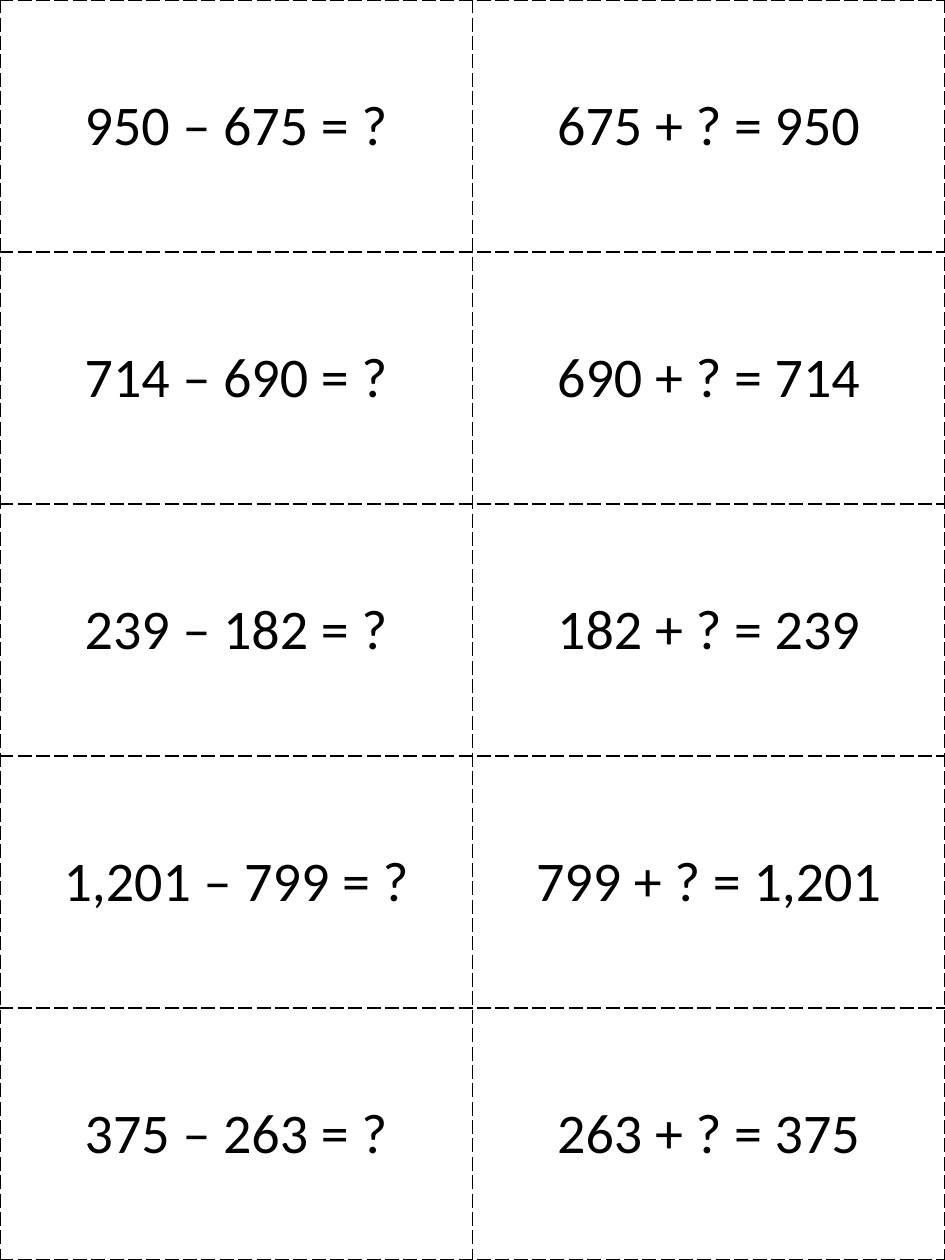
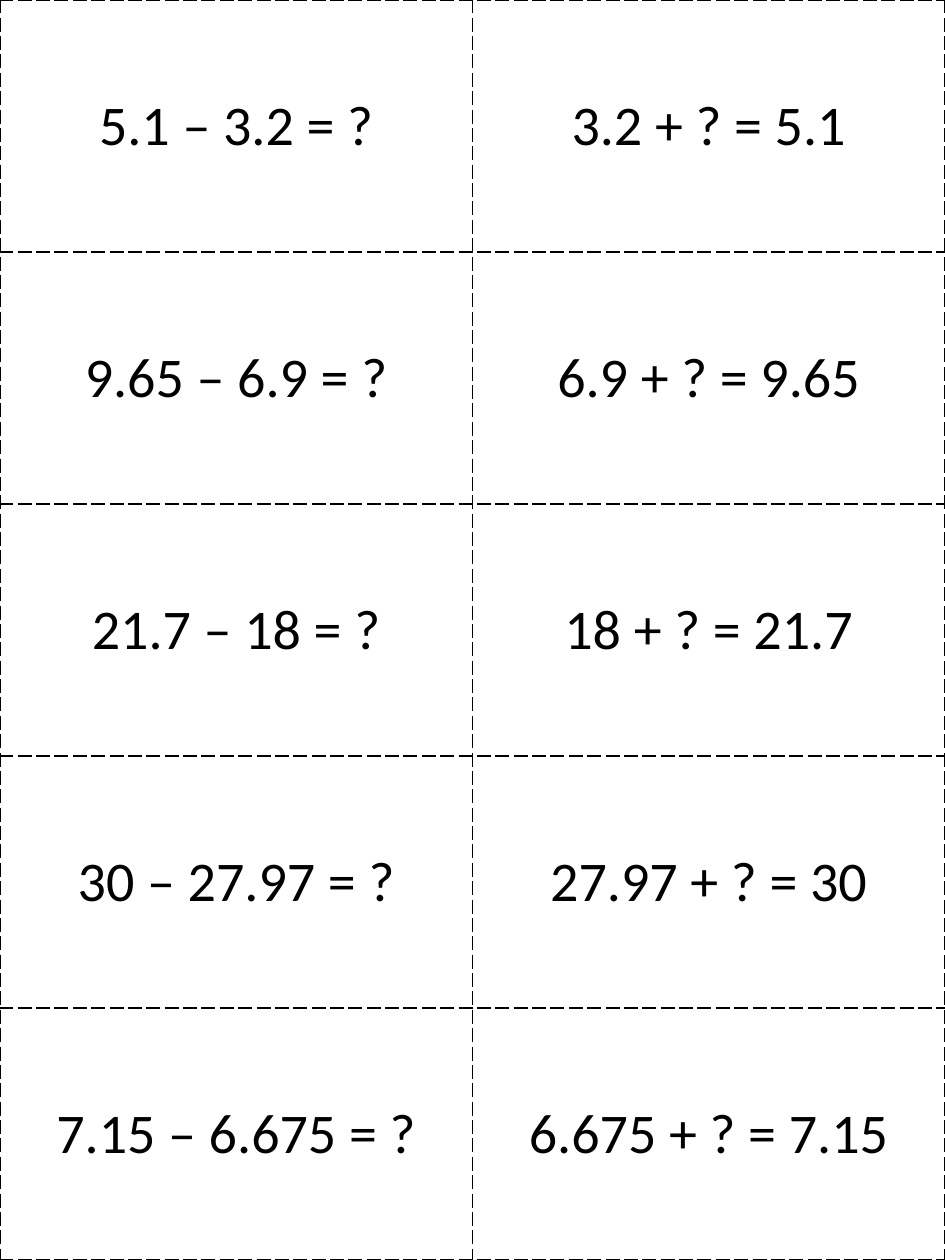
"""Builds two sheets of cut-out cards that pair each subtraction with its missing-addend form."""
import pptx
import pptx.dml.color
import pptx.enum.text
import pptx.oxml
import pptx.oxml.ns
import pptx.util

Pt = pptx.util.Pt
COLORS = {"ink": "000000", "paper": "FFFFFF"}
SHEET_WIDTH, SHEET_HEIGHT = 540, 720
CUT_LINE_WIDTH = 1

sheets = [
    [("950", "675"), ("714", "690"), ("239", "182"), ("1,201", "799"), ("375", "263")],
    [("5.1", "3.2"), ("9.65", "6.9"), ("21.7", "18"), ("30", "27.97"), ("7.15", "6.675")],
]


def write_text(card, text, *, size=32, font="Calibri", color="ink"):
    card.vertical_anchor = pptx.enum.text.MSO_ANCHOR.MIDDLE
    paragraph = card.text_frame.paragraphs[0]
    paragraph.alignment = pptx.enum.text.PP_ALIGN.CENTER
    run = paragraph.add_run()
    run.text = text
    run.font.size = Pt(size)
    run.font.name = font
    run.font.color.rgb = pptx.dml.color.RGBColor.from_string(COLORS[color])


def add_cut_lines(card):
    properties = card._tc.get_or_add_tcPr()
    for side in ("lnL", "lnR", "lnT", "lnB"):
        properties.append(pptx.oxml.parse_xml(
            f'<a:{side} {pptx.oxml.ns.nsdecls("a")} w="{Pt(CUT_LINE_WIDTH)}">'
            f'<a:solidFill><a:srgbClr val="{COLORS["ink"]}"/></a:solidFill>'
            f'<a:prstDash val="lgDash"/></a:{side}>'))


deck = pptx.Presentation()
deck.slide_width, deck.slide_height = Pt(SHEET_WIDTH), Pt(SHEET_HEIGHT)
blank_layout = deck.slide_layouts[6]

for problems in sheets:
    sheet = deck.slides.add_slide(blank_layout)
    cards = sheet.shapes.add_table(
        len(problems), 2, Pt(0), Pt(0), Pt(SHEET_WIDTH), Pt(SHEET_HEIGHT)).table
    cards.first_row = False
    cards.horz_banding = False
    for row, (total, part) in enumerate(problems):
        equations = (f"{total} – {part} = ?", f"{part} + ? = {total}")
        for column, equation in enumerate(equations):
            card = cards.cell(row, column)
            write_text(card, equation)
            add_cut_lines(card)
            card.fill.solid()
            card.fill.fore_color.rgb = pptx.dml.color.RGBColor.from_string(COLORS["paper"])

deck.save("out.pptx")
